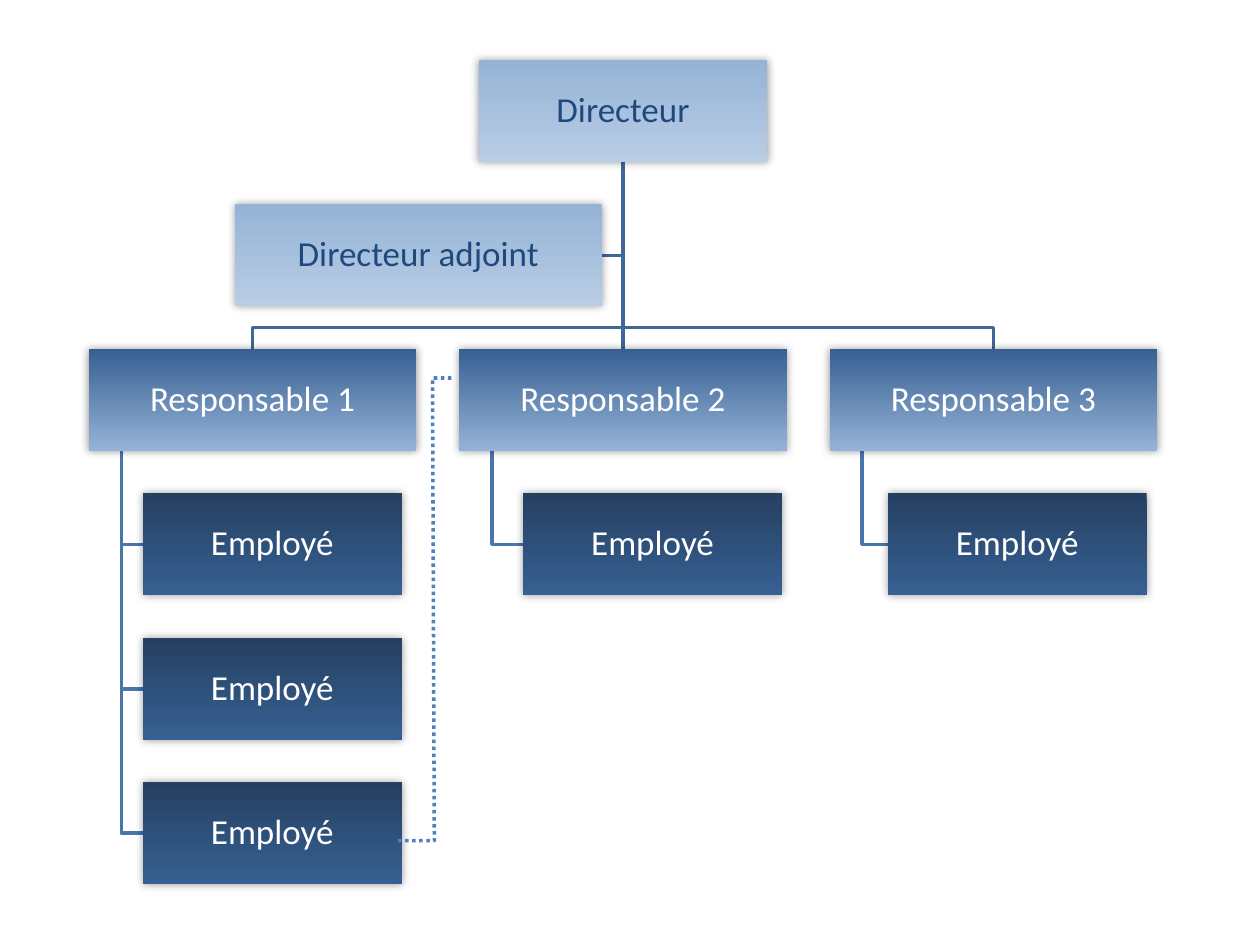
from dataclasses import dataclass

from lxml.etree import SubElement
from pptx import Presentation
from pptx.dml.color import RGBColor
from pptx.enum.dml import MSO_LINE
from pptx.enum.shapes import MSO_CONNECTOR, MSO_SHAPE
from pptx.enum.text import MSO_ANCHOR, PP_ALIGN
from pptx.oxml.ns import qn
from pptx.util import Pt


@dataclass(frozen=True)
class Theme:
    font: str = "Calibri"
    text_size: float = 20
    line_width: float = 2
    # Each box level: gradient top, gradient bottom, text
    direction: tuple = ("95B3D7", "B9CDE5", "1F497D")
    manager: tuple = ("376092", "95B3D7", "FFFFFF")
    employee: tuple = ("254061", "376092", "FFFFFF")
    upper_line: str = "3F6797"
    lower_line: str = "4875AC"
    dotted_line: str = "4F81BD"


class OrgChart:
    def __init__(self, page, theme):
        self.page = page
        self.theme = theme

    def box(self, text, left, top, width, height, level):
        box = self.page.shapes.add_shape(
            MSO_SHAPE.RECTANGLE, Pt(left), Pt(top), Pt(width), Pt(height))
        first, last, ink = map(RGBColor.from_string, level)
        box.fill.gradient()
        box.fill.gradient_angle = 270
        for stop, color in zip(box.fill.gradient_stops, (first, last)):
            stop.color.rgb = color
        box.line.fill.background()
        self.glow_shadow(box)

        frame = box.text_frame
        frame.word_wrap = True
        frame.vertical_anchor = MSO_ANCHOR.MIDDLE
        frame.margin_left = frame.margin_right = Pt(1)
        frame.margin_top = frame.margin_bottom = Pt(1)
        para = frame.paragraphs[0]
        para.text = text
        para.alignment = PP_ALIGN.CENTER
        para.line_spacing = 0.9
        para.font.name = self.theme.font
        para.font.size = Pt(self.theme.text_size)
        para.font.color.rgb = ink
        return box

    def glow_shadow(self, box):
        """Give the box an even, soft shadow on all sides."""
        box.shadow.inherit = False
        effects = box.element.spPr.find(qn("a:effectLst"))
        shadow = SubElement(effects, qn("a:outerShdw"), blurRad=str(Pt(5)),
                            dist="0", dir="0", rotWithShape="0")
        color = SubElement(shadow, qn("a:srgbClr"), val="000000")
        SubElement(color, qn("a:alpha"), val="40000")

    def style_line(self, shape, color):
        shape.line.color.rgb = RGBColor.from_string(color)
        shape.line.width = Pt(self.theme.line_width)

    def send_to_back(self, shape):
        shape.element.getparent().insert(2, shape.element)

    def elbow(self, points, color):
        """Draw an open line through the points."""
        start, *others = [(Pt(x), Pt(y)) for x, y in points]
        builder = self.page.shapes.build_freeform(*start)
        builder.add_line_segments(others, close=False)
        line = builder.convert_to_shape()
        line.fill.background()
        line.shadow.inherit = False
        self.style_line(line, color)
        return line

    def straight(self, upper, lower, color):
        """Join the bottom of one box to the top of another."""
        line = self.page.shapes.add_connector(MSO_CONNECTOR.STRAIGHT, 0, 0, 0, 0)
        line.begin_connect(upper, 2)
        line.end_connect(lower, 0)
        self.style_line(line, color)
        SubElement(line.element.spPr, qn("a:effectLst"))
        return line


def main():
    deck = Presentation()
    deck.slide_width, deck.slide_height = Pt(720), Pt(540)
    theme = Theme()
    chart = OrgChart(deck.slides.add_slide(deck.slide_layouts[6]), theme)

    height, gap = 58.2, 24.35
    trunk, branch = 356, 211.7
    director_width, deputy_width = 165, 209.6
    manager_width, employee_width = 187.4, 148
    rows = [34.3 + row * (height + gap) for row in range(6)]
    director_bottom = rows[0] + height
    manager_top, manager_bottom = rows[2], rows[2] + height
    bus = manager_top - gap / 2

    director = chart.box("Directeur", trunk - director_width / 2, rows[0],
                         director_width, height, theme.direction)
    deputy_right = trunk - gap / 2
    chart.box("Directeur adjoint", deputy_right - deputy_width, rows[1],
              deputy_width, height, theme.direction)
    deputy_middle = rows[1] + height / 2
    lines = [chart.elbow([(trunk, director_bottom), (trunk, deputy_middle),
                          (deputy_right, deputy_middle)], theme.upper_line)]

    # Left edge of the employees and their number, for each manager
    teams = [(81.6, 3), (298.9, 1), (507.3, 1)]
    for number, (employee_left, count) in enumerate(teams, start=1):
        center = trunk + (number - 2) * branch
        manager_left = center - manager_width / 2
        manager = chart.box(f"Responsable {number}", manager_left, manager_top,
                            manager_width, height, theme.manager)
        if center == trunk:
            lines.append(chart.straight(director, manager, theme.upper_line))
        else:
            lines.append(chart.elbow(
                [(trunk, director_bottom), (trunk, bus), (center, bus),
                 (center, manager_top)], theme.upper_line))

        stem = manager_left + manager_width / 10
        for top in rows[3:3 + count]:
            chart.box("Employé", employee_left, top, employee_width, height,
                      theme.employee)
            middle = top + height / 2
            lines.append(chart.elbow(
                [(stem, manager_bottom), (stem, middle),
                 (employee_left, middle)], theme.lower_line))

    for line in lines:
        chart.send_to_back(line)

    dotted = chart.elbow([(227.5, 480.4), (248.2, 480.4), (247.2, 216),
                          (259.2, 216)], theme.dotted_line)
    dotted.line.dash_style = MSO_LINE.ROUND_DOT

    deck.save("out.pptx")


if __name__ == "__main__":
    main()
